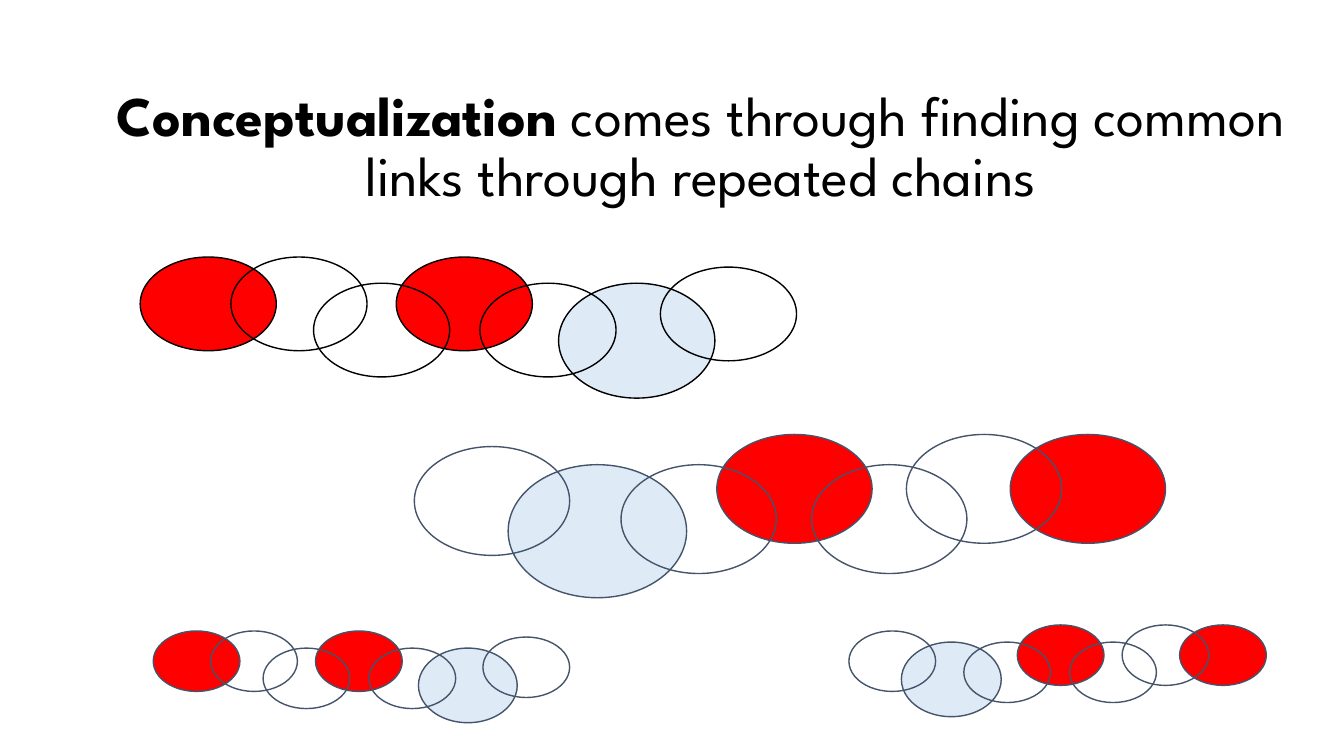
import pptx
import pptx.dml.color
import pptx.enum.shapes
import pptx.enum.text
import pptx.util

RED, PALE_BLUE, BLACK, SLATE = "FF0000", "DEEBF7", "000000", "44546A"
CHAIN_WIDTH, CHAIN_HEIGHT = 651, 140
SMALL, LARGE = (135, 93), (155, 114)
LINKS = [
    (0, 0, SMALL, RED),
    (90, 0, SMALL, None),
    (254, 0, SMALL, RED),
    (172, 26, SMALL, None),
    (415, 26, LARGE, PALE_BLUE),
    (516, 10, SMALL, None),
    (337, 26, SMALL, None),
]
CHAINS = [
    dict(box=(139, 255, 651, 140), outline=BLACK),
    dict(box=(411, 431, 745, 162), outline=SLATE, mirrored=True),
    dict(box=(152, 626, 413, 91), outline=SLATE),
    dict(box=(842, 620, 414, 91), outline=SLATE, mirrored=True),
]


def px(length):
    return pptx.util.Emu(round(length) * 9144)


def color(code):
    return pptx.dml.color.RGBColor.from_string(code)


def write(paragraph, text, *, font, size, ink=BLACK, bold=False):
    run = paragraph.add_run()
    run.text = text
    run.font.name = font
    run.font.size = pptx.util.Pt(size)
    run.font.bold = bold
    run.font.color.rgb = color(ink)


class ChainSlide:
    """Draws a heading and chains of overlapping links on one slide."""

    font = "League Spartan"
    heading_size = 40
    outline_width = 1

    def __init__(self, slide):
        self.slide = slide

    def heading(self, box, parts):
        frame = self.slide.shapes.add_textbox(*map(px, box)).text_frame
        frame.word_wrap = True
        frame.vertical_anchor = pptx.enum.text.MSO_ANCHOR.BOTTOM
        paragraph = frame.paragraphs[0]
        paragraph.alignment = pptx.enum.text.PP_ALIGN.CENTER
        paragraph.line_spacing = 0.9
        for text, bold in parts:
            write(paragraph, text, font=self.font, size=self.heading_size, bold=bold)

    def link(self, group, box, fill, outline):
        oval = group.shapes.add_shape(
            pptx.enum.shapes.MSO_SHAPE.OVAL, *map(px, box))
        oval.shadow.inherit = False
        if fill:
            oval.fill.solid()
            oval.fill.fore_color.rgb = color(fill)
        else:
            oval.fill.background()
        oval.line.color.rgb = color(outline)
        oval.line.width = pptx.util.Pt(self.outline_width)

    def chain(self, box, outline, mirrored=False):
        left, top, width, height = box
        x_scale, y_scale = width / CHAIN_WIDTH, height / CHAIN_HEIGHT
        group = self.slide.shapes.add_group_shape()
        for x, y, (link_width, link_height), fill in LINKS:
            if mirrored:
                x = CHAIN_WIDTH - x - link_width
            link_box = (left + x * x_scale, top + y * y_scale,
                        link_width * x_scale, link_height * y_scale)
            self.link(group, link_box, fill, outline)


def main():
    deck = pptx.Presentation()
    deck.slide_width, deck.slide_height = px(1333), px(750)
    page = ChainSlide(deck.slides.add_slide(deck.slide_layouts[6]))
    page.heading((81, 50, 1228, 162), [
        ("Conceptualization", True),
        (" comes through finding common links through repeated chains", False),
    ])
    for chain in CHAINS:
        page.chain(**chain)
    deck.save("out.pptx")


if __name__ == "__main__":
    main()
